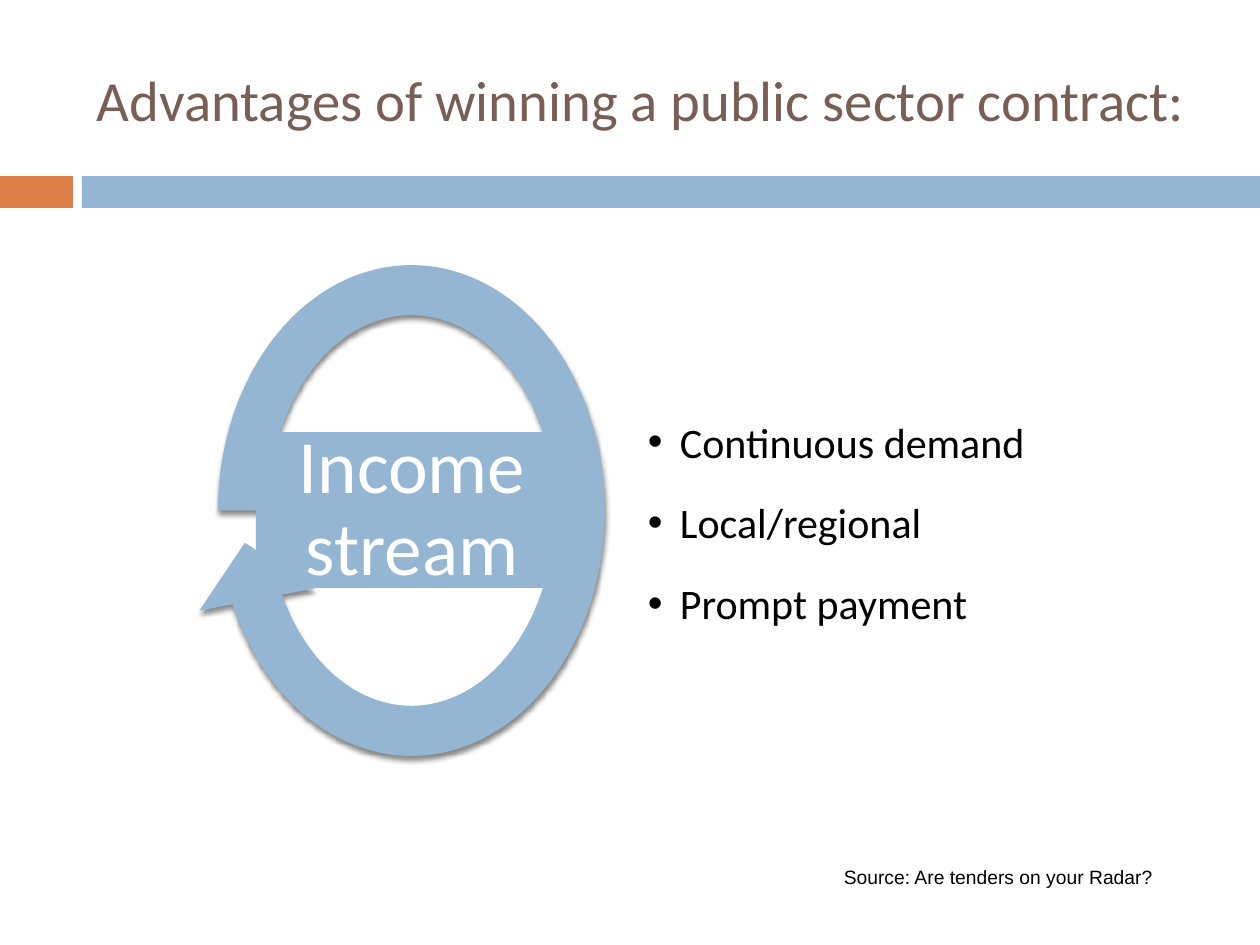
"""Builds a slide on the advantages of winning a public sector contract."""
from dataclasses import dataclass

from lxml.etree import SubElement
from pptx import Presentation
from pptx.dml.color import RGBColor
from pptx.enum.shapes import MSO_SHAPE as Preset
from pptx.enum.text import MSO_ANCHOR as Anchor, PP_ALIGN as Align
from pptx.oxml.ns import qn
from pptx.util import Inches, Pt

EMU_PER_PX = Inches(1) / 126


@dataclass(frozen=True)
class Theme:
    """Colours, fonts and type sizes of the slide."""
    blue: str = "94B6D2"
    orange: str = "DD8047"
    brown: str = "775F55"
    black: str = "000000"
    white: str = "FFFFFF"
    main_font: str = "Calibri"
    source_font: str = "Arial"
    title_size: float = 32.4
    hub_size: float = 43
    bullet_size: float = 24
    source_size: float = 11


THEME = Theme()


@dataclass(frozen=True)
class Area:
    """A rectangle in whole pixels."""
    left: int
    top: int
    width: int
    height: int

    def emu(self) -> tuple[int, ...]:
        """Returns the rectangle in EMU."""
        return tuple(px(n) for n in (self.left, self.top, self.width, self.height))


@dataclass(frozen=True)
class Block:
    """A preset shape with a plain fill."""
    area: Area
    color: str
    preset: Preset = Preset.RECTANGLE
    adjustments: tuple[float, ...] = ()


@dataclass(frozen=True)
class Label:
    """A text box whose paragraphs share one style."""
    area: Area
    lines: tuple[str, ...]
    size: float
    color: str
    font: str = THEME.main_font
    align: Align = Align.LEFT
    anchor: Anchor = Anchor.MIDDLE
    inset: tuple[int, int] = (13, 6)
    line_spacing: float = 1.0
    space_after: float = 0
    bullet_indent: int = 0


BARS = (
    Block(Area(0, 176, 73, 32), THEME.orange),
    Block(Area(82, 176, 1178, 32), THEME.blue),
)
CYCLE = Block(Area(184, 231, 455, 559), THEME.blue, Preset.CIRCULAR_ARROW,
              (0.11, 11.42, 90, 108, 0.13))
HUB = Block(Area(256, 432, 312, 156), THEME.blue)
LABELS = (
    Label(Area(84, 31, 1124, 136), ("Advantages of winning a public sector contract:",),
          THEME.title_size, THEME.brown),
    Label(HUB.area, ("Income stream",), THEME.hub_size, THEME.white,
          align=Align.CENTER, inset=(4, 4), line_spacing=0.9),
    Label(Area(645, 258, 431, 503), ("Continuous demand", "Local/regional", "Prompt payment"),
          THEME.bullet_size, THEME.black, inset=(3, 3), line_spacing=1.5,
          space_after=3, bullet_indent=32),
    Label(Area(501, 859, 665, 37), ("Source: Are tenders on your Radar?",),
          THEME.source_size, THEME.black, THEME.source_font, Align.RIGHT, Anchor.TOP),
)


def px(length: int) -> int:
    """Turns pixels into EMU."""
    return round(length * EMU_PER_PX)


def draw_block(page, block: Block):
    """Draws a filled shape without line or shadow."""
    shape = page.shapes.add_shape(block.preset, *block.area.emu())
    for index, value in enumerate(block.adjustments):
        shape.adjustments[index] = value
    shape.fill.solid()
    shape.fill.fore_color.rgb = RGBColor.from_string(block.color)
    shape.line.fill.background()
    shape.shadow.inherit = False
    return shape


def cast_shadow(shape) -> None:
    """Gives a shape a soft shadow straight below it."""
    effects = shape.element.spPr.find(qn("a:effectLst"))
    shadow = SubElement(effects, qn("a:outerShdw"), blurRad=str(Pt(3)),
                        dist=str(Pt(2.4)), dir="5400000", rotWithShape="0")
    color = SubElement(shadow, qn("a:srgbClr"), val=THEME.black)
    SubElement(color, qn("a:alpha"), val="45000")


def add_bullet(para, indent: int) -> None:
    """Gives a paragraph a round bullet with a hanging indent."""
    properties = para._p.get_or_add_pPr()
    properties.set("marL", str(px(indent)))
    properties.set("indent", str(-px(indent)))
    SubElement(properties, qn("a:buFont"), typeface=THEME.source_font)
    SubElement(properties, qn("a:buChar"), char="•")


def draw_label(page, label: Label) -> None:
    """Draws a text box and styles its paragraphs."""
    frame = page.shapes.add_textbox(*label.area.emu()).text_frame
    frame.word_wrap = True
    frame.vertical_anchor = label.anchor
    frame.margin_left = frame.margin_right = px(label.inset[0])
    frame.margin_top = frame.margin_bottom = px(label.inset[1])
    frame.text = "\n".join(label.lines)
    for para in frame.paragraphs:
        para.alignment = label.align
        para.line_spacing = label.line_spacing
        para.space_after = Pt(label.space_after)
        if label.bullet_indent:
            add_bullet(para, label.bullet_indent)
        para.font.name = label.font
        para.font.size = Pt(label.size)
        para.font.color.rgb = RGBColor.from_string(label.color)


def main() -> None:
    """Builds and saves the deck."""
    deck = Presentation()
    deck.slide_width, deck.slide_height = Inches(10), Inches(7.5)
    page = deck.slides.add_slide(deck.slide_layouts[6])
    for bar in BARS:
        draw_block(page, bar)
    cast_shadow(draw_block(page, CYCLE))
    draw_block(page, HUB)
    for label in LABELS:
        draw_label(page, label)
    deck.save("out.pptx")


if __name__ == "__main__":
    main()
